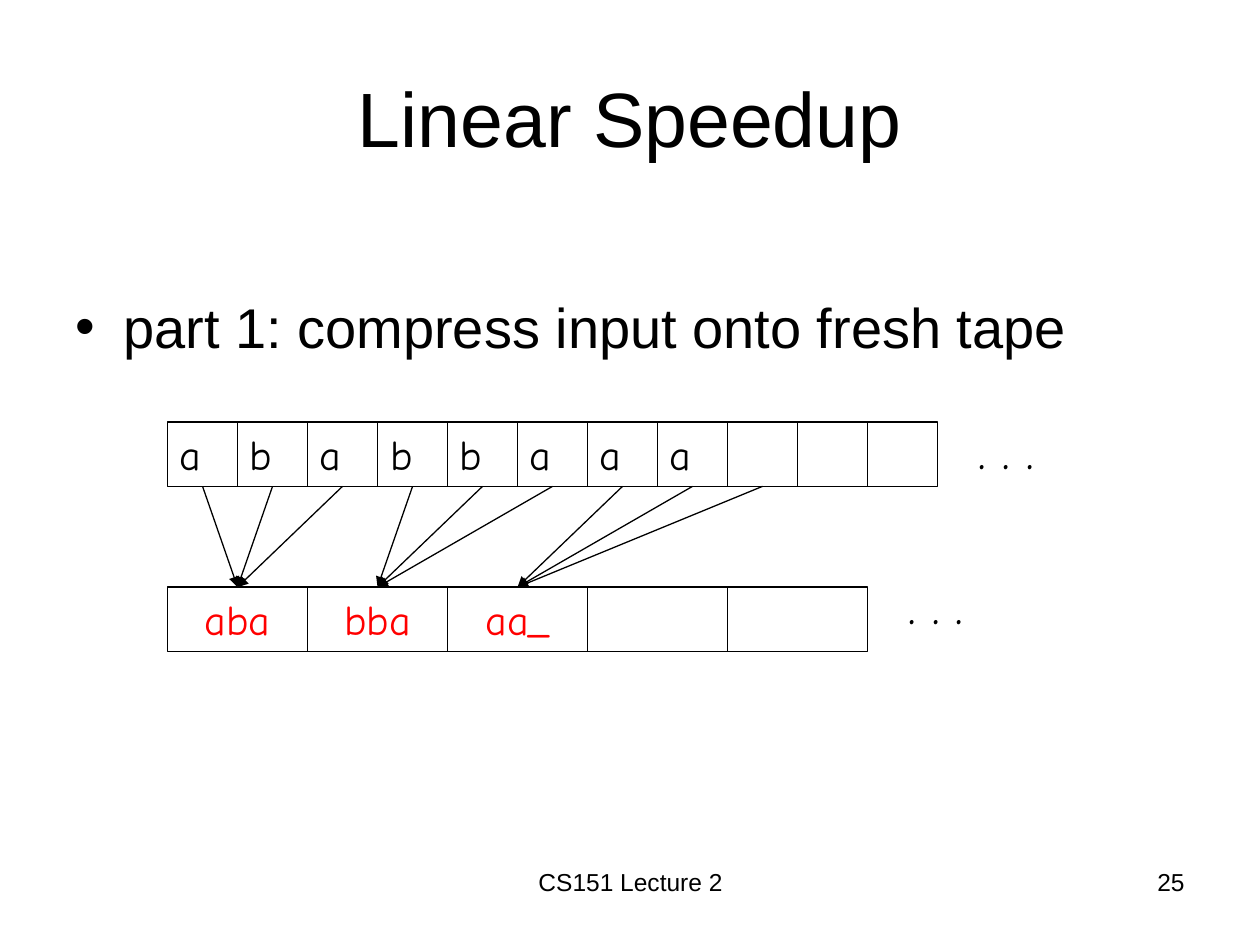
from lxml import etree
from pptx import Presentation
from pptx.dml.color import RGBColor
from pptx.enum import shapes, text
from pptx.oxml import ns
from pptx.util import Inches, Pt

BLACK = RGBColor(0, 0, 0)
RED = RGBColor(255, 0, 0)
LEFT, MID, RIGHT = text.PP_ALIGN.LEFT, text.PP_ALIGN.CENTER, text.PP_ALIGN.RIGHT
SANS, COMIC = "Arial", "Comic Neue"

START = 1.33
CELL = 5 / 9
GROUP = 3
WIDE = 2 * CELL
TALL = 0.51
TOP, LOW = 3.35, 4.66
INPUT = "abbabaaa"
INPUT = "ababbaaa"


class Board:
    """Draws on one slide in a shared style."""

    def __init__(self, slide):
        self.slide = slide

    def letter(self, frame, words, size, font, color=BLACK, align=LEFT, before=0):
        """Sets the words of a text frame and their style."""
        frame.word_wrap = True
        frame.text = words
        para = frame.paragraphs[0]
        para.alignment = align
        para.space_before = Pt(before)
        for run in para.runs:
            run.font.size = Pt(size)
            run.font.name = font
            run.font.color.rgb = color

    def label(self, x, y, w, h, words, size, font=SANS, **style):
        box = self.slide.shapes.add_textbox(Inches(x), Inches(y), Inches(w), Inches(h))
        self.letter(box.text_frame, words, size, font, **style)
        return box

    def bullet(self, x, y, w, h, words, size):
        box = self.label(x, y, w, h, words, size, before=3)
        props = box.text_frame.paragraphs[0]._p.get_or_add_pPr()
        props.set("marL", str(Inches(0.38)))
        props.set("indent", str(-Inches(0.38)))
        etree.SubElement(props, ns.qn("a:buFont")).set("typeface", SANS)
        etree.SubElement(props, ns.qn("a:buChar")).set("char", "•")

    def cell(self, x, y, w, words, color, align):
        box = self.slide.shapes.add_shape(
            shapes.MSO_SHAPE.RECTANGLE, Inches(x), Inches(y), Inches(w), Inches(TALL))
        box.shadow.inherit = False
        box.fill.background()
        box.line.color.rgb = BLACK
        box.line.width = Pt(0.75)
        box.text_frame.vertical_anchor = text.MSO_ANCHOR.TOP
        if words:
            self.letter(box.text_frame, words, 24, COMIC, color, align, before=2)

    def tape(self, y, w, words, color=BLACK, align=LEFT):
        """Draws a row of touching cells."""
        for i, word in enumerate(words):
            self.cell(START + i * w, y, w, word, color, align)

    def arrow(self, x1, y1, x2, y2):
        link = self.slide.shapes.add_connector(
            shapes.MSO_CONNECTOR.STRAIGHT, Inches(x1), Inches(y1), Inches(x2), Inches(y2))
        link.line.color.rgb = BLACK
        link.line.width = Pt(0.75)
        props = link._element.spPr
        line = props.find(ns.qn("a:ln"))
        etree.SubElement(line, ns.qn("a:tailEnd")).set("type", "triangle")
        etree.SubElement(props, ns.qn("a:effectLst"))


def main():
    deck = Presentation()
    deck.slide_width, deck.slide_height = Inches(10), Inches(7.5)
    board = Board(deck.slides.add_slide(deck.slide_layouts[6]))

    title = board.label(0.5, 0.3, 9, 1.25, "Linear Speedup", 44, align=MID)
    title.text_frame.vertical_anchor = text.MSO_ANCHOR.MIDDLE
    board.bullet(0.5, 2.27, 9, 0.81, "part 1: compress input onto fresh tape", 32)

    board.tape(TOP, CELL, [*INPUT, "", "", ""])
    board.tape(LOW, WIDE, ["aba", "bba", "aa_", "", ""], RED, MID)
    for x, y in ((7.67, 3.29), (7.11, 4.52)):
        board.label(x, y, 2.11, 0.57, ". . .", 28, COMIC, before=2)

    for i in range(3 * GROUP):
        board.arrow(START + (i + 0.5) * CELL, TOP + TALL,
                    START + (i // GROUP + 0.5) * WIDE, LOW)

    board.label(3.42, 6.83, 3.17, 0.52, "CS151 Lecture 2", 14, align=MID)
    board.label(7.17, 6.83, 2.33, 0.52, "25", 14, align=RIGHT)
    deck.save("out.pptx")


if __name__ == "__main__":
    main()
